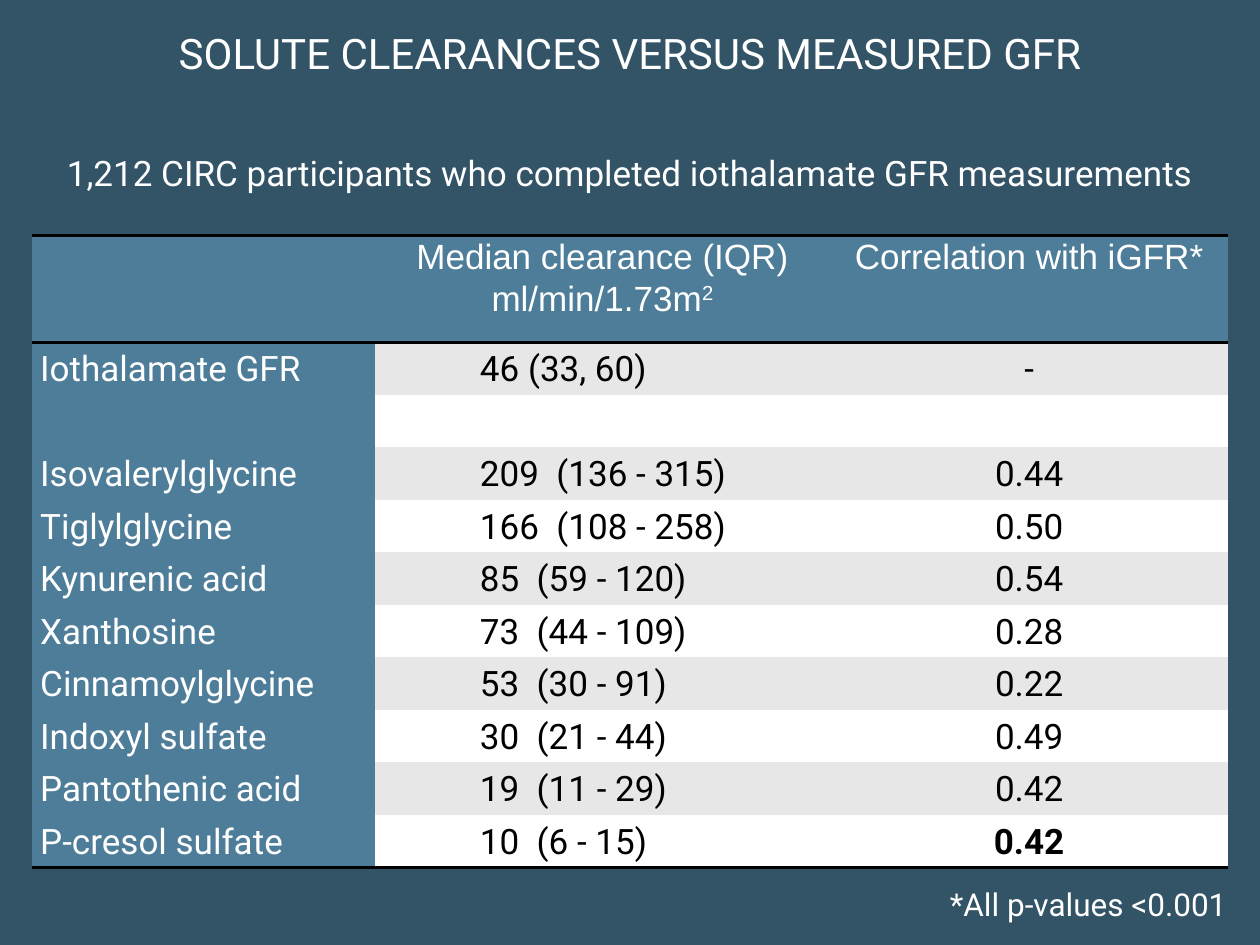
import pptx
import pptx.util
import pptx.dml.color
import pptx.enum.text
import pptx.oxml

Pt = pptx.util.Pt
ALIGN = pptx.enum.text.PP_ALIGN
ANCHOR = pptx.enum.text.MSO_ANCHOR

WHITE, BLACK = "FFFFFF", "000000"
BACKGROUND, HEADING, BAND = "335366", "4D7D99", "E7E7E7"
NO_STYLE = "{2D5ABB26-0587-4C30-8999-92F81FD0307C}"
A_NS = "http://schemas.openxmlformats.org/drawingml/2006/main"

HEADERS = [("", ""), ("Median clearance (IQR) ml/min/1.73m", "2"),
           ("Correlation with iGFR*", "")]
ROWS = [
    ("Iothalamate GFR", "46 (33, 60)", "-"),
    ("", "", ""),
    ("Isovalerylglycine", "209  (136 - 315)", "0.44"),
    ("Tiglylglycine", "166  (108 - 258)", "0.50"),
    ("Kynurenic acid", "85  (59 - 120)", "0.54"),
    ("Xanthosine", "73  (44 - 109)", "0.28"),
    ("Cinnamoylglycine", "53  (30 - 91)", "0.22"),
    ("Indoxyl sulfate", "30  (21 - 44)", "0.49"),
    ("Pantothenic acid", "19  (11 - 29)", "0.42"),
    ("P-cresol sulfate", "10  (6 - 15)", "0.42"),
]


def set_fill(fill, color):
    fill.solid()
    fill.fore_color.rgb = pptx.dml.color.RGBColor.from_string(color)


def write_text(tf, text, size=20, font="Roboto", color=WHITE, bold=False,
               align=ALIGN.LEFT, spacing=None, after=None, superscript=""):
    p = tf.paragraphs[0]
    p.alignment = align
    p.line_spacing = spacing
    p.space_after = after
    for part in filter(None, (text, superscript)):
        r = p.add_run()
        r.text = part
        r.font.size = Pt(size)
        r.font.name = font
        r.font.bold = bold
        set_fill(r.font.fill, color)
    if superscript:
        r.font._element.set("baseline", "30000")


def add_text_box(s, box, text, anchor=ANCHOR.BOTTOM, **style):
    tf = s.shapes.add_textbox(*map(Pt, box)).text_frame
    tf.word_wrap = True
    tf.vertical_anchor = anchor
    write_text(tf, text, **style)


def add_rule(cell, side):
    cell._tc.get_or_add_tcPr().append(pptx.oxml.parse_xml(
        f'<a:ln{side} xmlns:a="{A_NS}" w="{Pt(2)}"><a:solidFill>'
        f'<a:srgbClr val="{BLACK}"/></a:solidFill></a:ln{side}>'))


def format_cell(cell, fill, sides="", indent=5, anchor=ANCHOR.MIDDLE):
    for side in sides:
        add_rule(cell, side)
    set_fill(cell.fill, fill)
    cell.margin_left, cell.margin_right = Pt(indent), Pt(5)
    cell.margin_top = cell.margin_bottom = 0
    cell.vertical_anchor = anchor


def add_clearance_table(s, box):
    left, top, width, height = box
    header_height = 61
    shape = s.shapes.add_table(len(ROWS) + 1, 3, *map(Pt, box))
    table = shape.table
    table._tbl.tblPr.find(f"{{{A_NS}}}tableStyleId").text = NO_STYLE
    for column, share in zip(table.columns, (0.287, 0.38, 0.333)):
        column.width = Pt(width * share)
    for row in table.rows:
        row.height = Pt((height - header_height) / len(ROWS))
    table.rows[0].height = Pt(header_height)

    # Header row
    for j, (text, superscript) in enumerate(HEADERS):
        cell = table.cell(0, j)
        format_cell(cell, HEADING, "TB", anchor=ANCHOR.TOP)
        write_text(cell.text_frame, text, font="Arial", align=ALIGN.CENTER,
                   spacing=1.06, superscript=superscript)

    # Solute rows: heading column, indented clearances, centred correlations
    for i, values in enumerate(ROWS, 1):
        last = i == len(ROWS)
        for j, text in enumerate(values):
            cell = table.cell(i, j)
            body_fill = BAND if i % 2 else WHITE
            format_cell(cell, body_fill if j else HEADING, "B" if last else "",
                        indent=60 if j == 1 else 5)
            write_text(cell.text_frame, text, color=BLACK if j else WHITE,
                       bold=last and j == 2, spacing=1.06,
                       align=ALIGN.CENTER if j == 2 else ALIGN.LEFT)


def main():
    prs = pptx.Presentation()
    prs.slide_width, prs.slide_height = Pt(720), Pt(540)
    s = prs.slides.add_slide(prs.slide_layouts[6])
    set_fill(s.background.fill, BACKGROUND)

    add_clearance_table(s, (18, 134.7, 684, 361))

    # Title, subtitle and footnote
    add_text_box(s, (0, 12, 720, 36), "SOLUTE CLEARANCES VERSUS MEASURED GFR",
                 size=24, align=ALIGN.CENTER)
    add_text_box(s, (0, 78, 720, 36),
                 "1,212 CIRC participants who completed iothalamate GFR measurements",
                 align=ALIGN.CENTER)
    add_text_box(s, (438, 495.5, 270, 32), "*All p-values <0.001",
                 anchor=ANCHOR.TOP, size=18, align=ALIGN.RIGHT, spacing=1.3,
                 after=Pt(12))
    prs.save("out.pptx")


if __name__ == "__main__":
    main()
